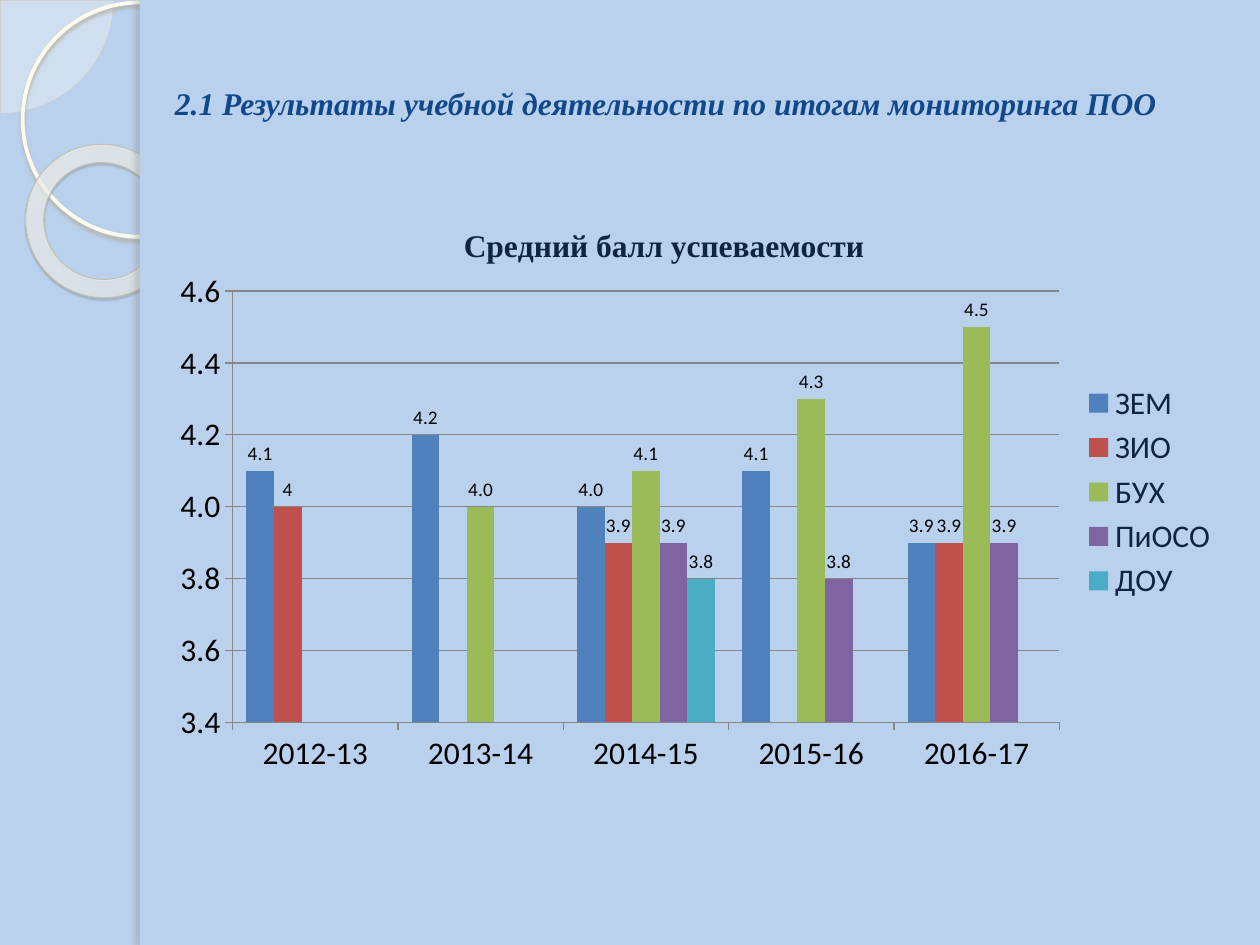
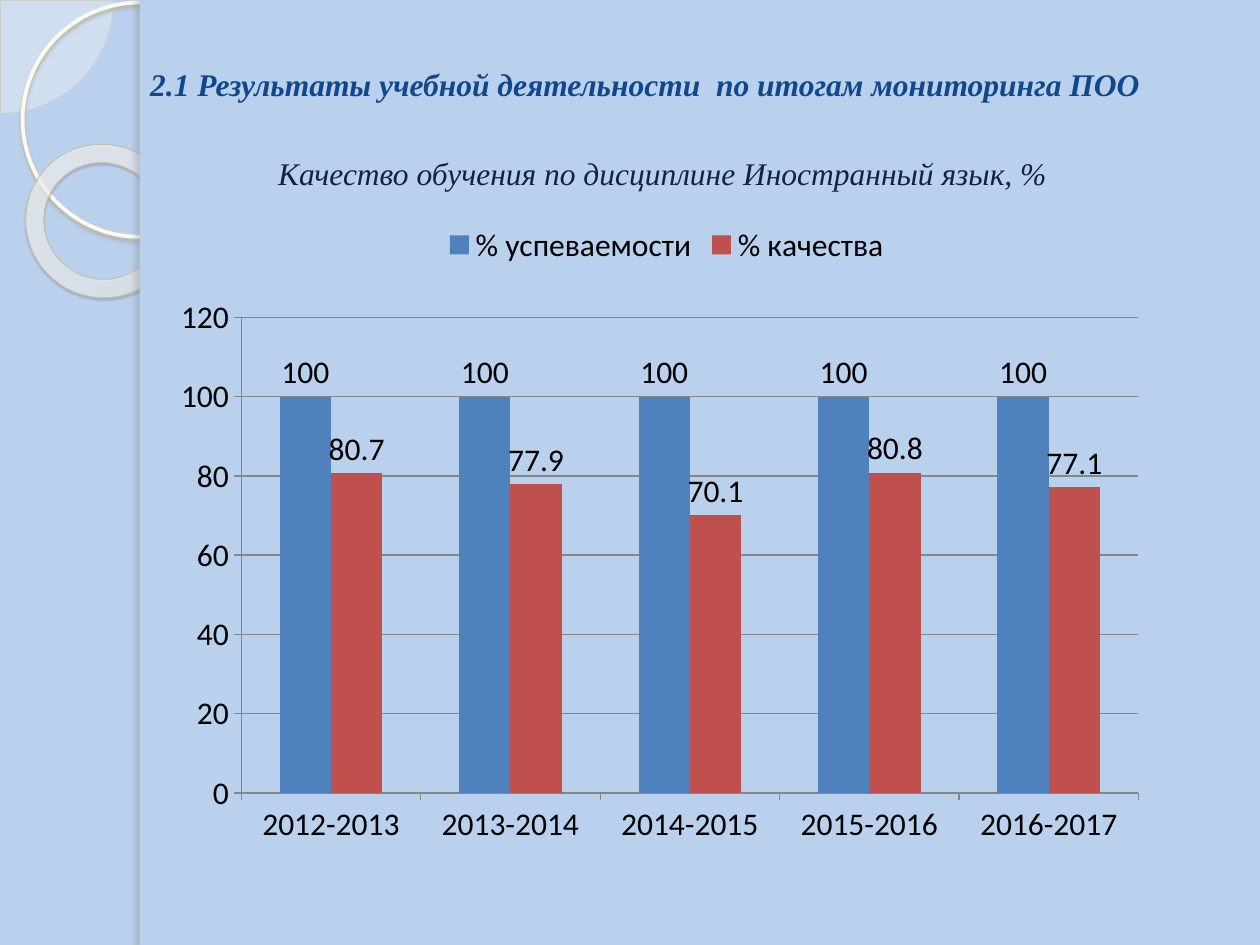
"""Build two slides of column charts on study results."""
from dataclasses import dataclass

import pptx
import pptx.chart.data
import pptx.dml.color
import pptx.enum.chart
import pptx.enum.shapes
import pptx.enum.text
import pptx.oxml
import pptx.oxml.ns
import pptx.util
from pptx.util import Inches


@dataclass(frozen=True)
class Theme:
    """Colours, fonts and type sizes shared by the slides."""
    background: str = "BAD1ED"
    title: str = "11478B"
    dark: str = "0F243E"
    black: str = "000000"
    grid: str = "868686"
    series: tuple = ("4F81BD", "C0504D", "9BBB59", "8064A2", "4BACC6")
    serif: str = "Times New Roman"
    sans: str = "Calibri"
    size: float = 18
    small: float = 11


THEME = Theme()
SHAPES = pptx.enum.shapes.MSO_SHAPE
CHARTS = pptx.enum.chart
qn = pptx.oxml.ns.qn


def rgb(code):
    return pptx.dml.color.RGBColor.from_string(code)


def xml(markup, prefix):
    """Parse markup whose root uses the given namespace prefix."""
    declaration = pptx.oxml.ns.nsdecls(prefix)
    return pptx.oxml.parse_xml(markup.replace(">", f" {declaration}>", 1))


def set_font(font, color, name, size=THEME.size, bold=False, italic=False):
    font.name = name
    font.size = pptx.util.Pt(size)
    font.color.rgb = rgb(color)
    font.bold = bold
    font.italic = italic


def color_xml(color, alpha):
    return f'<a:srgbClr val="{color}"><a:alpha val="{alpha * 1000}"/></a:srgbClr>'


def add_shadow(shape, color, alpha, blur, distance, angle):
    """Add an outer shadow, with blur and distance in points."""
    shadow = xml(
        f'<a:outerShdw blurRad="{pptx.util.Pt(blur)}" dist="{pptx.util.Pt(distance)}" '
        f'dir="{angle * 60000}" rotWithShape="0">{color_xml(color, alpha)}</a:outerShdw>', "a")
    shape.element.spPr.find(qn("a:effectLst")).append(shadow)


def add_figure(slide, kind, box, fill=None, alpha=100, line=None, line_width=1):
    """Add a preset shape with an optional translucent fill and outline."""
    shape = slide.shapes.add_shape(kind, *map(Inches, box))
    shape.shadow.inherit = False
    if fill:
        shape.fill.solid()
        shape.fill.fore_color.rgb = rgb(fill)
        color = shape.element.spPr.find(qn("a:solidFill"))[0]
        color.append(xml(f'<a:alpha val="{alpha * 1000}"></a:alpha>', "a"))
    else:
        shape.fill.background()
    if line:
        shape.line.color.rgb = rgb(line)
        shape.line.width = pptx.util.Pt(line_width)
    else:
        shape.line.fill.background()
    return shape


def fill_radial(shape, stops):
    """Replace the solid fill with a circular gradient."""
    stop_markup = "".join(f'<a:gs pos="{position * 1000}">{color_xml(color, alpha)}</a:gs>'
                          for position, color, alpha in stops)
    gradient = xml(
        f'<a:gradFill><a:gsLst>{stop_markup}</a:gsLst><a:path path="circle">'
        '<a:fillToRect l="-408000" t="-50000" r="508000" b="150000"/>'
        '</a:path></a:gradFill>', "a")
    properties = shape.element.spPr
    properties.replace(properties.find(qn("a:solidFill")), gradient)


def decorate_layout(layout, slide):
    """Draw the side ornament and move it to the shared layout."""
    layout.background.fill.solid()
    layout.background.fill.fore_color.rgb = rgb(THEME.background)

    pie = add_figure(slide, SHAPES.PIE, (-0.89, -0.89, 1.79, 1.79), "FDFDF9", 33, "D1CEBB", 0.25)
    pie.adjustments[0] = 0
    pie.adjustments[1] = 54
    ring = add_figure(slide, SHAPES.OVAL, (0.18, 0.02, 1.86, 1.86),
                      line="FEFBEC", line_width=2.15)
    add_shadow(ring, "B2B0A4", 85, 2, 2, 90)
    donut = add_figure(slide, SHAPES.DONUT, (0.2, 1.15, 1.23, 1.21), "FEFDFA", 70, "C5C1AE", 0.58)
    donut.adjustments[0] = 0.12
    donut.rotation = 38.6
    fill_radial(donut, [(0, "FEFDFA", 70), (70, "FFFFFC", 55), (100, "E2DBB7", 60)])
    add_shadow(donut, "5A5850", 35, 1, 1.2, 75)
    panel = add_figure(slide, SHAPES.RECTANGLE, (1.11, 0, 8.89, 7.5), THEME.background)
    edge = add_figure(slide, SHAPES.RECTANGLE, (1.11, 0, 0.08, 7.5), THEME.background)
    add_shadow(edge, "77756F", 25, 3, 3, 180)

    for shape in (pie, ring, donut, panel, edge):
        layout.shapes.element.append(shape.element)


def set_title(slide, text, box):
    title = slide.shapes.title
    title.left, title.top, title.width, title.height = map(Inches, box)
    frame = title.text_frame
    frame.auto_size = pptx.enum.text.MSO_AUTO_SIZE.NONE
    frame.vertical_anchor = pptx.enum.text.MSO_ANCHOR.MIDDLE
    paragraph = frame.paragraphs[0]
    paragraph.alignment = pptx.enum.text.PP_ALIGN.CENTER
    run = paragraph.add_run()
    run.text = text
    set_font(run.font, THEME.title, THEME.serif, bold=True, italic=True)


def add_caption(slide, text, box):
    """Add a one-line italic caption."""
    frame = slide.shapes.add_textbox(*map(Inches, box)).text_frame
    frame.word_wrap = False
    run = frame.paragraphs[0].add_run()
    run.text = text
    set_font(run.font, THEME.dark, THEME.serif, italic=True)


def place_part(chart, part, after=None, target="", **fractions):
    """Set the manual layout of a chart part, in fractions of the chart."""
    parent = chart.element.find(f".//{qn(part)}")
    for layout in parent.findall(qn("c:layout")):
        parent.remove(layout)
    values = "".join(f'<c:{key} val="{value}"/>' for key, value in fractions.items())
    layout = xml(f'<c:layout><c:manualLayout>{target}<c:xMode val="edge"/>'
                 f'<c:yMode val="edge"/>{values}</c:manualLayout></c:layout>', "c")
    index = parent.index(parent.find(qn(after))) + 1 if after else 0
    parent.insert(index, layout)


def style_axes(chart, minimum, maximum, step, number_format):
    for axis in (chart.category_axis, chart.value_axis):
        axis.major_tick_mark = CHARTS.XL_TICK_MARK.OUTSIDE
        axis.format.line.color.rgb = rgb(THEME.grid)
    axis = chart.value_axis
    axis.minimum_scale, axis.maximum_scale, axis.major_unit = minimum, maximum, step
    axis.major_gridlines.format.line.color.rgb = rgb(THEME.grid)
    axis.tick_labels.number_format = number_format
    axis.tick_labels.number_format_is_linked = False


def add_column_chart(slide, box, categories, series_values, scale, plot_box, gap,
                     label_size=THEME.size, number_format="General", plain_labels=()):
    """Add a clustered column chart with labelled series."""
    data = pptx.chart.data.CategoryChartData()
    data.categories = categories
    for name, values in series_values.items():
        data.add_series(name, values)
    chart = slide.shapes.add_chart(CHARTS.XL_CHART_TYPE.COLUMN_CLUSTERED,
                                   *map(Inches, box), data).chart
    chart.has_title = False
    set_font(chart.font, THEME.black, THEME.sans)
    style_axes(chart, *scale, number_format)
    plot = chart.plots[0]
    plot.vary_by_categories = False
    plot.gap_width = gap
    plot.overlap = 0
    for series, color in zip(plot.series, THEME.series):
        series.format.fill.solid()
        series.format.fill.fore_color.rgb = rgb(color)
        labels = series.data_labels
        labels.show_value = True
        labels.position = CHARTS.XL_LABEL_POSITION.OUTSIDE_END
        labels.number_format = "General" if series.name in plain_labels else number_format
        labels.number_format_is_linked = False
        set_font(labels.font, THEME.black, THEME.sans, label_size)
    place_part(chart, "c:plotArea", target='<c:layoutTarget val="inner"/>',
               **dict(zip("xywh", plot_box)))
    return chart


def add_legend(chart, position, color):
    chart.has_legend = True
    chart.legend.position = position
    chart.legend.include_in_layout = False
    set_font(chart.legend.font, color, THEME.sans)


def add_chart_title(chart, text):
    chart.has_title = True
    run = chart.chart_title.text_frame.paragraphs[0].add_run()
    run.text = text
    set_font(run.font, THEME.dark, THEME.serif, bold=True)
    place_part(chart, "c:title", "c:tx", x=0.28, y=0.04)


def build_grades(slide):
    """Fill the slide on average grades."""
    set_title(slide, "2.1 Результаты учебной деятельности по итогам мониторинга ПОО",
              (0.87, 0.46, 8.83, 0.72))
    grades = {
        "ЗЕМ": (4.1, 4.2, 4, 4.1, 3.9),
        "ЗИО": (4, None, 3.9, None, 3.9),
        "БУХ": (None, 4, 4.1, 4.3, 4.5),
        "ПиОСО": (None, None, 3.9, 3.8, 3.9),
        "ДОУ": (None, None, 3.8, None, None),
    }
    years = [f"{year}-{year % 100 + 1}" for year in range(2012, 2017)]
    chart = add_column_chart(slide, (1.25, 1.56, 8.52, 4.69), years, grades, (3.4, 4.6, 0.2),
                             (0.07, 0.16, 0.77, 0.73), 100, THEME.small, "0.0",
                             ("ЗИО", "ПиОСО", "ДОУ"))
    add_legend(chart, CHARTS.XL_LEGEND_POSITION.RIGHT, THEME.dark)
    add_chart_title(chart, "Средний балл успеваемости")


def build_language(slide):
    """Fill the slide on foreign language results."""
    results = {
        "% успеваемости": (100,) * 5,
        "% качества": (80.7, 77.9, 70.1, 80.8, 77.1),
    }
    years = [f"{year}-{year + 1}" for year in range(2012, 2017)]
    chart = add_column_chart(slide, (1.17, 1.41, 8.28, 5.55), years, results, (0, 120, 20),
                             (0.09, 0.2, 0.86, 0.68), 150)
    add_legend(chart, CHARTS.XL_LEGEND_POSITION.TOP, THEME.black)
    place_part(chart, "c:legend", "c:legendPos", x=0.28, y=0.06)
    add_caption(slide, "Качество обучения по дисциплине Иностранный язык, %",
                (2.11, 1.17, 6.37, 0.4))
    set_title(slide, "2.1 Результаты учебной деятельности  по итогам мониторинга ПОО",
              (1.02, 0.31, 8.2, 0.72))


def main():
    presentation = pptx.Presentation()
    presentation.slide_width, presentation.slide_height = Inches(10), Inches(7.5)
    layout = presentation.slide_layouts.get_by_name("Title Only")
    grades_slide = presentation.slides.add_slide(layout)
    decorate_layout(layout, grades_slide)
    build_grades(grades_slide)
    build_language(presentation.slides.add_slide(layout))
    presentation.save("out.pptx")


if __name__ == "__main__":
    main()
